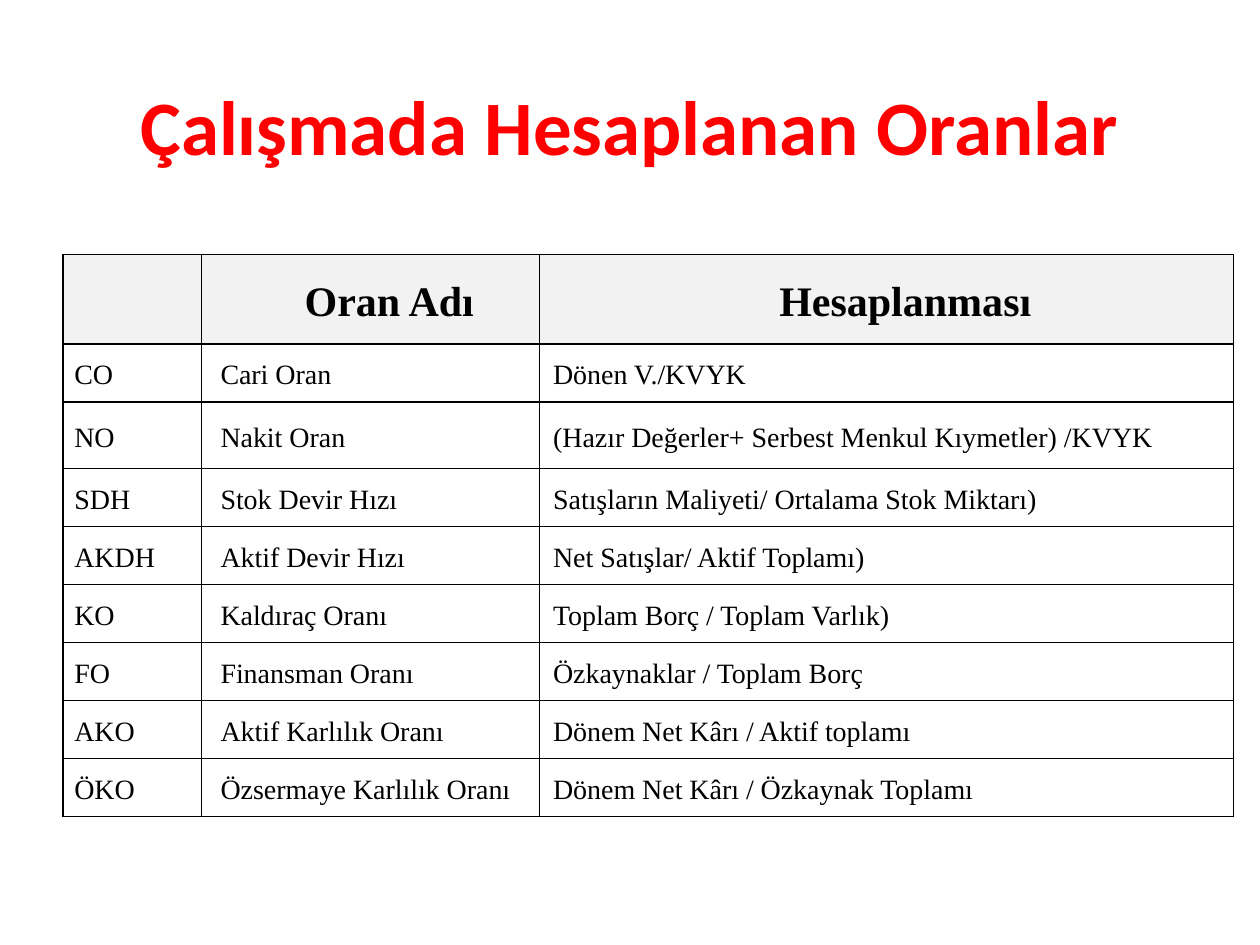
from dataclasses import dataclass

from lxml import etree
from pptx import Presentation
from pptx import util as u
from pptx.dml.color import RGBColor
from pptx.enum import text
from pptx.oxml import ns


@dataclass(frozen=True)
class Theme:
    title_font: str = "Calibri"
    table_font: str = "Times New Roman"
    title_size: int = 44
    header_size: int = 24
    body_size: int = 16
    red: str = "FF0000"
    black: str = "000000"
    white: str = "FFFFFF"
    header_fill: str = "F2F2F2"
    border_width: float = 1


@dataclass(frozen=True)
class Column:
    heading: str
    width: float
    indent: float


@dataclass(frozen=True)
class Ratio:
    code: str
    name: str
    formula: str


THEME = Theme()
HEADER_INDENT = 0.3
HEADER_HEIGHT = 0.71
ROW_HEIGHT = 0.46
TALL_ROW_HEIGHT = 0.53
COLUMNS = [
    Column("", 1.1, 0.04),
    Column("Oran Adı", 2.68, 0.1),
    Column("Hesaplanması", 5.51, 0.06),
]
RATIOS = [
    Ratio("CO", "Cari Oran", "Dönen V./KVYK"),
    Ratio("NO", "Nakit Oran", "(Hazır Değerler+ Serbest Menkul Kıymetler) /KVYK"),
    Ratio("SDH", "Stok Devir Hızı", "Satışların Maliyeti/ Ortalama Stok Miktarı)"),
    Ratio("AKDH", "Aktif Devir Hızı", "Net Satışlar/ Aktif Toplamı)"),
    Ratio("KO", "Kaldıraç Oranı", "Toplam Borç / Toplam Varlık)"),
    Ratio("FO", "Finansman Oranı", "Özkaynaklar / Toplam Borç"),
    Ratio("AKO", "Aktif Karlılık Oranı", "Dönem Net Kârı / Aktif toplamı"),
    Ratio("ÖKO", "Özsermaye Karlılık Oranı", "Dönem Net Kârı / Özkaynak Toplamı"),
]


def write_text(frame, content: str, *, font: str, size: float, color: str,
               bold: bool = False, align=text.PP_ALIGN.LEFT, indent: float = 0,
               line_spacing: float | None = None, space_after: float = 0) -> None:
    paragraph = frame.paragraphs[0]
    paragraph.alignment = align
    paragraph.line_spacing = line_spacing
    paragraph.space_after = u.Pt(space_after)
    if indent:
        properties = paragraph._p.get_or_add_pPr()
        properties.set("marL", "0")
        properties.set("indent", str(u.Inches(indent)))
    run = paragraph.add_run()
    run.text = content
    run.font.name = font
    run.font.size = u.Pt(size)
    run.font.bold = bold
    run.font.color.rgb = RGBColor.from_string(color)


def draw_borders(cell) -> None:
    properties = cell._tc.get_or_add_tcPr()
    for position, side in enumerate(("lnL", "lnR", "lnT", "lnB")):
        line = etree.Element(ns.qn(f"a:{side}"), w=str(u.Pt(THEME.border_width)))
        fill = etree.SubElement(line, ns.qn("a:solidFill"))
        etree.SubElement(fill, ns.qn("a:srgbClr"), val=THEME.black)
        properties.insert(position, line)


def fill_cell(cell, content: str, column: Column, is_header: bool) -> None:
    cell.fill.solid()
    cell.fill.fore_color.rgb = RGBColor.from_string(
        THEME.header_fill if is_header else THEME.white)
    draw_borders(cell)
    cell.vertical_anchor = text.MSO_ANCHOR.MIDDLE
    cell.margin_left = cell.margin_right = u.Inches(0.05)
    cell.margin_top = cell.margin_bottom = 0
    if content:
        write_text(
            cell.text_frame, content, font=THEME.table_font, color=THEME.black,
            size=THEME.header_size if is_header else THEME.body_size,
            bold=is_header,
            align=text.PP_ALIGN.CENTER if is_header else text.PP_ALIGN.LEFT,
            indent=HEADER_INDENT if is_header else column.indent,
            line_spacing=1.15, space_after=10)


def add_title(slide, content: str) -> None:
    title = slide.shapes.title
    title.left, title.top = u.Inches(0.5), u.Inches(0.56)
    title.width, title.height = u.Inches(9), u.Inches(0.86)
    title.text_frame.vertical_anchor = text.MSO_ANCHOR.MIDDLE
    write_text(title.text_frame, content, font=THEME.title_font,
               size=THEME.title_size, color=THEME.red, bold=True,
               align=text.PP_ALIGN.CENTER)


def add_ratio_table(slide, columns: list[Column], ratios: list[Ratio]) -> None:
    heights = [HEADER_HEIGHT] + [
        TALL_ROW_HEIGHT if ratio.code == "NO" else ROW_HEIGHT for ratio in ratios]
    rows = [[column.heading for column in columns]] + [
        [ratio.code, ratio.name, ratio.formula] for ratio in ratios]
    table = slide.shapes.add_table(
        len(rows), len(columns), u.Inches(0.5), u.Inches(2.02),
        u.Inches(sum(column.width for column in columns)),
        u.Inches(sum(heights))).table
    for table_column, column in zip(table.columns, columns):
        table_column.width = u.Inches(column.width)
    for row_index, (height, row) in enumerate(zip(heights, rows)):
        table.rows[row_index].height = u.Inches(height)
        for column_index, (content, column) in enumerate(zip(row, columns)):
            fill_cell(table.cell(row_index, column_index), content, column,
                      row_index == 0)


def main() -> None:
    presentation = Presentation()
    presentation.slide_width = u.Inches(10)
    presentation.slide_height = u.Inches(7.5)
    slide = presentation.slides.add_slide(presentation.slide_layouts[5])
    add_title(slide, "Çalışmada Hesaplanan Oranlar")
    add_ratio_table(slide, COLUMNS, RATIOS)
    presentation.save("out.pptx")


if __name__ == "__main__":
    main()
